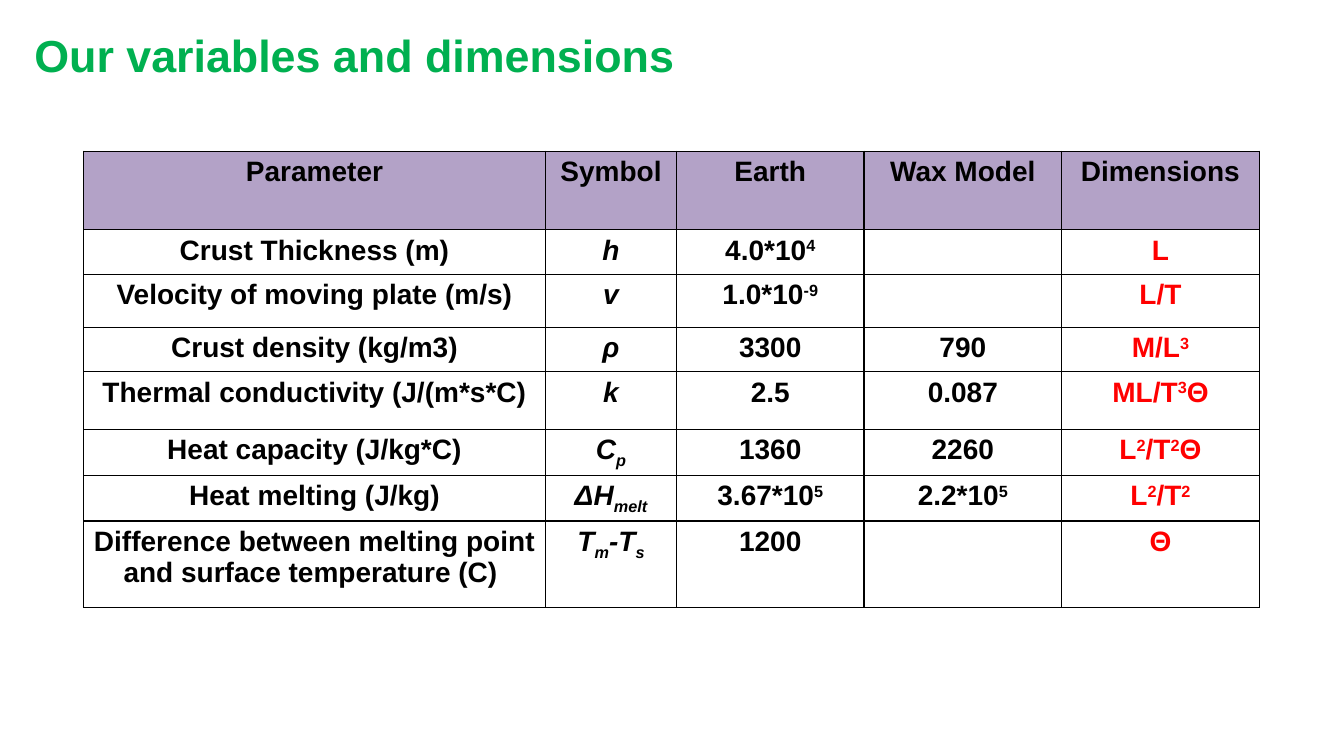
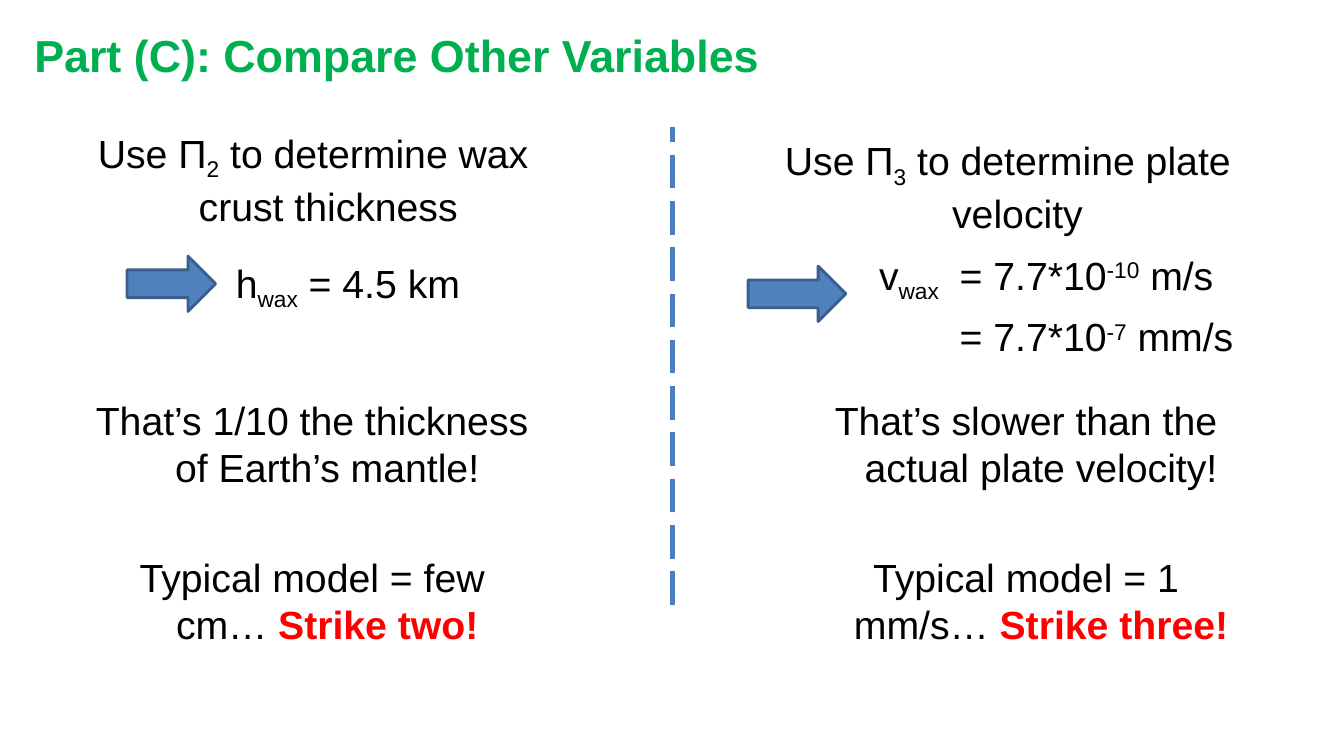
from dataclasses import dataclass
from typing import Optional

from lxml import etree
from pptx import Presentation
from pptx.dml.color import RGBColor
from pptx.enum.dml import MSO_LINE
from pptx.enum.shapes import MSO_CONNECTOR, MSO_SHAPE
from pptx.enum.text import MSO_ANCHOR, MSO_AUTO_SIZE, PP_ALIGN
from pptx.oxml.ns import qn
from pptx.util import Emu, Pt

LEFT, CENTER = PP_ALIGN.LEFT, PP_ALIGN.CENTER
TOP, BOTTOM = MSO_ANCHOR.TOP, MSO_ANCHOR.BOTTOM
NO_AUTOFIT = MSO_AUTO_SIZE.NONE
RIGHT_ARROW = MSO_SHAPE.RIGHT_ARROW
STRAIGHT = MSO_CONNECTOR.STRAIGHT
LONG_DASH = MSO_LINE.LONG_DASH
TITLE_ONLY, TWO_CONTENT = 5, 3
EMU_PER_PX = 9144  # 100 px to the inch


def px(length):
    return Emu(length * EMU_PER_PX)


@dataclass(frozen=True)
class Theme:
    font: str = "Arial"
    ink: str = "000000"
    title: str = "00B050"
    accent: str = "FF0000"
    header: str = "B3A2C7"
    arrow: str = "4F81BD"
    arrow_edge: str = "3A5F8C"
    divider: str = "4B7EBC"
    title_size: int = 32
    body_size: int = 28
    table_size: int = 20


@dataclass(frozen=True)
class Span:
    text: str
    baseline: int = 0
    bold: bool = False
    color: Optional[str] = None


def sup(text):
    return Span(text, baseline=30000)


def sub(text):
    return Span(text, baseline=-25000)


@dataclass(frozen=True)
class Para:
    spans: tuple
    align: PP_ALIGN = CENTER
    before: float = 5.8
    margin: int = 30
    indent: int = -30


class SlideBuilder:
    def __init__(self, deck, theme):
        self.deck, self.theme, self.page = deck, theme, None

    def new_page(self, layout, title):
        self.page = self.deck.slides.add_slide(self.deck.slide_layouts[layout])
        box = self.page.shapes.title
        self.place(box, 24, 11, 1160, 80)
        frame = box.text_frame
        self.set_frame(frame, BOTTOM)
        frame.margin_bottom = px(10)
        para = frame.paragraphs[0]
        para.alignment = LEFT
        self.add_spans(para, [title], self.theme.title_size, self.theme.title, bold=True)

    def place(self, box, left, top, width, height):
        box.left, box.top, box.width, box.height = map(px, (left, top, width, height))

    def set_frame(self, frame, anchor):
        frame.word_wrap = True
        frame.auto_size = NO_AUTOFIT
        frame.vertical_anchor = anchor

    def add_spans(self, para, spans, size, color, bold=False, italic=False):
        """Add each span as a run; plain strings are unmarked spans."""
        for span in spans:
            if isinstance(span, str):
                span = Span(span)
            run = para.add_run()
            run.text = span.text
            font = run.font
            font.name, font.size = self.theme.font, Pt(size)
            font.bold, font.italic = bold or span.bold, italic
            font.color.rgb = RGBColor.from_string(span.color or color)
            if span.baseline:
                font._element.set("baseline", str(span.baseline))

    def add_paras(self, frame, paras):
        self.set_frame(frame, TOP)
        for index, item in enumerate(paras):
            para = frame.add_paragraph() if index else frame.paragraphs[0]
            para.alignment = item.align
            para.space_before = Pt(item.before)
            para.line_spacing = 1.0
            properties = para._p.get_or_add_pPr()
            properties.set("marL", str(px(item.margin)))
            properties.set("indent", str(px(item.indent)))
            etree.SubElement(properties, qn("a:buNone"))
            self.add_spans(para, item.spans, self.theme.body_size, self.theme.ink)

    def body(self, index, area, paras):
        box = self.page.placeholders[index]
        self.place(box, *area)
        self.add_paras(box.text_frame, paras)

    def text(self, area, paras):
        box = self.page.shapes.add_textbox(*map(px, area))
        self.add_paras(box.text_frame, paras)

    def arrow(self, *area):
        shape = self.page.shapes.add_shape(RIGHT_ARROW, *map(px, area))
        shape.shadow.inherit = False
        shape.fill.solid()
        shape.fill.fore_color.rgb = RGBColor.from_string(self.theme.arrow)
        shape.line.color.rgb = RGBColor.from_string(self.theme.arrow_edge)
        shape.line.width = Pt(2)

    def divider(self, x, start, end):
        line = self.page.shapes.add_connector(STRAIGHT, px(x), px(start), px(x), px(end))
        line.line.color.rgb = RGBColor.from_string(self.theme.divider)
        line.line.width = Pt(3)
        line.line.dash_style = LONG_DASH
        etree.SubElement(line._element.spPr, qn("a:effectLst"))

    def table(self, left, top, widths, heights, rows):
        """Draw a header row, then rows with italic symbols and accented last cells."""
        frame = self.page.shapes.add_table(
            len(rows), len(widths), px(left), px(top), px(sum(widths)), px(sum(heights)))
        table = frame.table
        table.first_row = table.horz_banding = False
        for column, width in zip(table.columns, widths):
            column.width = px(width)
        for row, height in zip(table.rows, heights):
            row.height = px(height)
        last = len(widths) - 1
        for r, row in enumerate(rows):
            for c, spans in enumerate(row):
                cell = table.cell(r, c)
                self.outline_cell(cell)
                if r == 0:
                    cell.fill.solid()
                    cell.fill.fore_color.rgb = RGBColor.from_string(self.theme.header)
                else:
                    cell.fill.background()
                para = cell.text_frame.paragraphs[0]
                para.alignment = CENTER
                color = self.theme.accent if r and c == last else self.theme.ink
                self.add_spans(para, spans, self.theme.table_size, color,
                               bold=True, italic=r > 0 and c == 1)

    def outline_cell(self, cell):
        properties = cell._tc.get_or_add_tcPr()
        for side in ("lnL", "lnR", "lnT", "lnB"):
            edge = etree.SubElement(properties, qn("a:" + side), w=str(Pt(1)))
            fill = etree.SubElement(edge, qn("a:solidFill"))
            etree.SubElement(fill, qn("a:srgbClr"), val=self.theme.ink)


VARIABLES = [
    [["Parameter"], ["Symbol"], ["Earth"], ["Wax Model"], ["Dimensions"]],
    [["Crust Thickness (m)"], ["h"], ["4.0*10", sup("4")], [], ["L"]],
    [["Velocity of moving plate (m/s)"], ["v"], ["1.0*10", sup("-9")], [], ["L/T"]],
    [["Crust density (kg/m3)"], ["ρ"], ["3300"], ["790"], ["M/L", sup("3")]],
    [["Thermal conductivity (J/(m*s*C)"], ["k"], ["2.5"], ["0.087"],
     ["ML/T", sup("3"), "Θ"]],
    [["Heat capacity (J/kg*C)"], ["C", sub("p")], ["1360"], ["2260"],
     ["L", sup("2"), "/T", sup("2"), "Θ"]],
    [["Heat melting (J/kg)"], ["ΔH", sub("melt")], ["3.67*10", sup("5")],
     ["2.2*10", sup("5")], ["L", sup("2"), "/T", sup("2")]],
    [["Difference between melting point and surface temperature (C) "],
     ["T", sub("m"), "-T", sub("s")], ["1200"], [], ["Θ"]],
]


def variables_slide(slide):
    slide.new_page(TITLE_ONLY, "Our variables and dimensions")
    slide.table(83, 150, [458, 130, 186, 196, 196],
                [78, 44, 53, 44, 57, 44, 44, 86], VARIABLES)


def comparison_slide(slide):
    slide.new_page(TWO_CONTENT, "Part (C): Compare Other Variables")
    columns = [
        (1, (82, 388, 455, 262), "That’s 1/10 the thickness of Earth’s mantle!",
         "Typical model = few cm… ", "Strike two!"),
        (2, (800, 388, 435, 262), "That’s slower than the actual plate velocity!",
         "Typical model = 1 mm/s… ", "Strike three!"),
    ]
    for index, area, finding, model, verdict in columns:
        strike = Span(verdict, bold=True, color=slide.theme.accent)
        slide.body(index, area, [Para((finding,)), Para((model, strike), before=45)])

    slide.text((73, 123, 475, 103),
               [Para(("Use Π", sub("2"), " to determine wax crust thickness"))])
    slide.text((224, 252, 270, 83), [Para(("h", sub("wax"), " = 4.5 km"), LEFT)])
    slide.arrow(126, 254, 88, 55)

    slide.text((762, 130, 475, 85),
               [Para(("Use Π", sub("3"), " to determine plate velocity "))])
    slide.text((862, 244, 464, 75), [
        Para(("v", sub("wax\t"), "= 7.7*10", sup("-10"), " m/s"), LEFT),
        Para(("= 7.7*10", sup("-7"), " mm/s"), LEFT, margin=80, indent=0),
    ])
    slide.arrow(742, 264, 97, 55)
    slide.divider(667, 600, 126)


def main():
    deck = Presentation()
    deck.slide_width, deck.slide_height = px(1333), px(750)
    slide = SlideBuilder(deck, Theme())
    variables_slide(slide)
    comparison_slide(slide)
    deck.save("out.pptx")


if __name__ == "__main__":
    main()
